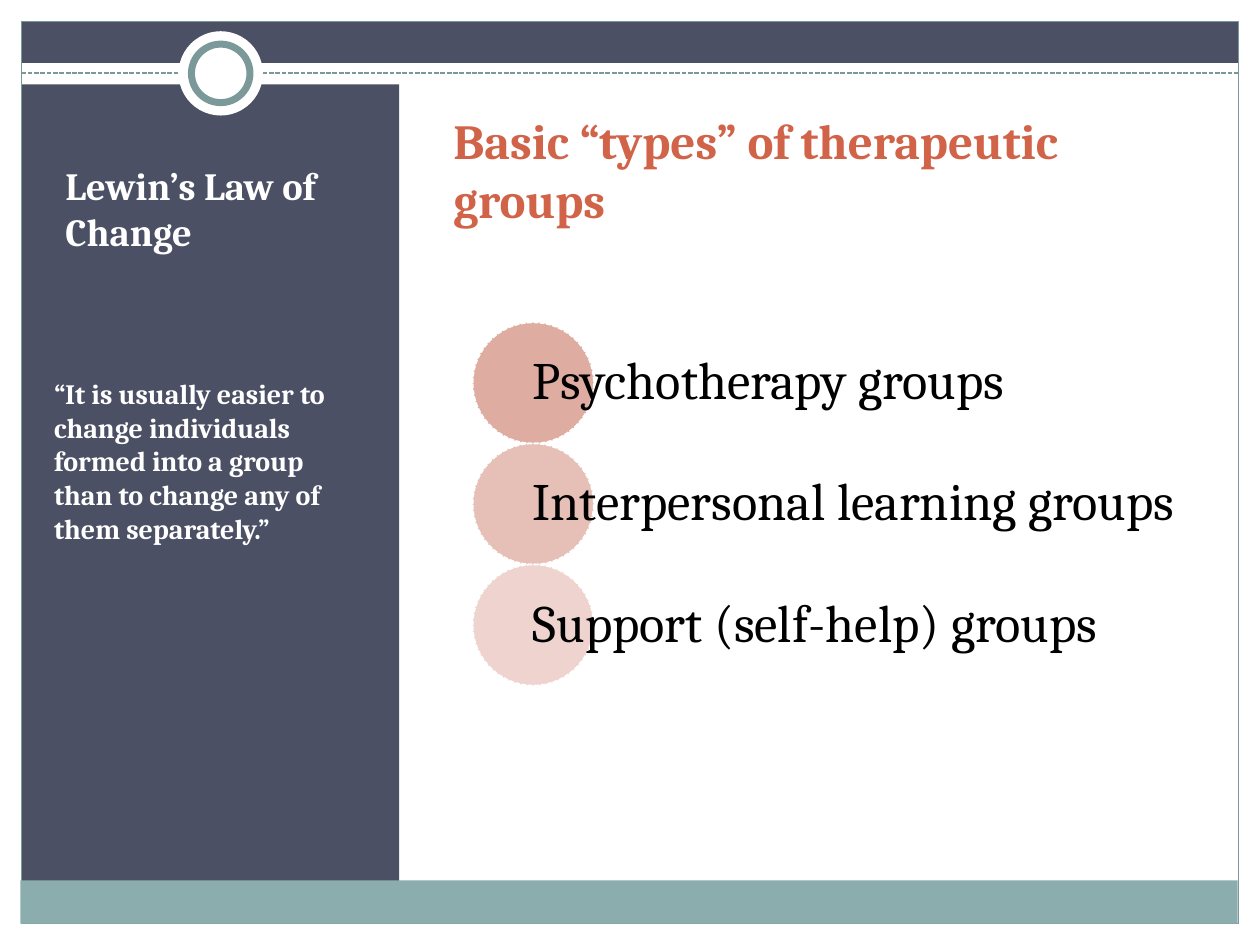
import lxml.etree
import pptx
import pptx.util
import pptx.dml.color
import pptx.enum.dml
import pptx.enum.shapes
import pptx.enum.text
import pptx.oxml.ns

Cm = pptx.util.Cm
Pt = pptx.util.Pt
RGBColor = pptx.dml.color.RGBColor
Kind = pptx.enum.shapes.MSO_SHAPE
Dash = pptx.enum.dml.MSO_LINE
Anchor = pptx.enum.text.MSO_ANCHOR
qn = pptx.oxml.ns.qn

WHITE = RGBColor(0xFF, 0xFF, 0xFF)
BLACK = RGBColor(0, 0, 0)
SLATE = RGBColor(0x4B, 0x50, 0x64)
SAGE = RGBColor(0x7C, 0x99, 0x9A)
TEAL = RGBColor(0x8C, 0xAD, 0xAE)
RUST = RGBColor(0xD1, 0x63, 0x49)
BRICK = RGBColor(0xBE, 0x5A, 0x42)
CLAY = RGBColor(0xCF, 0x80, 0x71)
BLUSH = RGBColor(0xE0, 0xA8, 0xA0)


def draw(shapes, kind, area, fill=None, line=None, width=0.75):
    shape = shapes.add_shape(kind, *[Cm(n) for n in area])
    shape.shadow.inherit = False
    if fill is None:
        shape.fill.background()
    else:
        shape.fill.solid()
        shape.fill.fore_color.rgb = fill
    if line is None:
        shape.line.fill.background()
    else:
        shape.line.color.rgb = line
        shape.line.width = Pt(width)
    return shape


def write(shapes, area, text, size, color, bold=False):
    box = shapes.add_textbox(*[Cm(n) for n in area])
    frame = box.text_frame
    frame.word_wrap = True
    run = frame.paragraphs[0].add_run()
    run.text = text
    run.font.name = "Cambria"
    run.font.size = Pt(size)
    run.font.bold = bold
    run.font.color.rgb = color
    return frame


deck = pptx.Presentation()
deck.slide_width = Cm(25.4)
deck.slide_height = Cm(19.05)
slide = deck.slides.add_slide(deck.slide_layouts[6])
shapes = slide.shapes

for area, fill in [
    ((0.43, 0.43, 24.54, 0.84), SLATE),
    ((0, 18.62, 25.4, 0.43), WHITE),
    ((24.97, 0, 0.43, 19.05), WHITE),
    ((0, 0, 25.4, 0.33), WHITE),
    ((0, 0, 0.43, 19.05), WHITE),
    ((0.43, 1.7, 7.62, 16.31), SLATE),
]:
    draw(shapes, Kind.RECTANGLE, area, fill)

draw(shapes, Kind.RECTANGLE, (0.43, 0.43, 24.54, 18.19), line=SAGE)

rule = shapes.add_connector(
    pptx.enum.shapes.MSO_CONNECTOR.STRAIGHT, Cm(0.43), Cm(1.47), Cm(24.97), Cm(1.47))
rule.line.color.rgb = SAGE
rule.line.width = Pt(0.9)
rule.line.dash_style = Dash.SQUARE_DOT
lxml.etree.SubElement(rule._element.spPr, qn("a:effectLst"))

draw(shapes, Kind.OVAL, (3.6, 0.63, 1.7, 1.7), WHITE)
draw(shapes, Kind.OVAL, (3.86, 0.89, 1.18, 1.18), WHITE, SAGE, 4)
draw(shapes, Kind.RECTANGLE, (0.41, 17.75, 24.54, 0.87), TEAL)

law = write(shapes, (1.07, 3.45, 6.55, 2.74), "Lewin’s Law of Change", 22, WHITE, True)
law.vertical_anchor = Anchor.BOTTOM
law.margin_bottom = Cm(1.07)

quote = "“It is usually easier to change individuals formed into a group than to change any of them separately.”"
write(shapes, (0.84, 7.47, 6.55, 5.87), quote, 16, WHITE, True)

group = shapes.add_group_shape().shapes
size = 2.44
for row, (name, color) in enumerate([
    ("Psychotherapy groups", BRICK),
    ("Interpersonal learning groups", CLAY),
    ("Support (self-help) groups", BLUSH),
]):
    top = 6.5 + row * size
    disc = draw(group, Kind.OVAL, (9.53, top, size, size), color, WHITE, 0.9)
    disc.line.dash_style = Dash.SQUARE_DOT
    tint = disc._element.spPr.find(qn("a:solidFill"))[0]
    lxml.etree.SubElement(tint, qn("a:alpha"), val="50000")

    label = write(group, (10.74, top, 12.95, size), name, 30, BLACK)
    label.vertical_anchor = Anchor.MIDDLE
    label.margin_left = label.margin_right = 0
    label.margin_top = label.margin_bottom = Cm(0.1)
    label.paragraphs[0].line_spacing = 0.9

head = write(shapes, (8.89, 2.11, 12.7, 2.64), "Basic “types” of therapeutic groups", 28, RUST, True)
head.auto_size = pptx.enum.text.MSO_AUTO_SIZE.SHAPE_TO_FIT_TEXT

deck.save("out.pptx")
